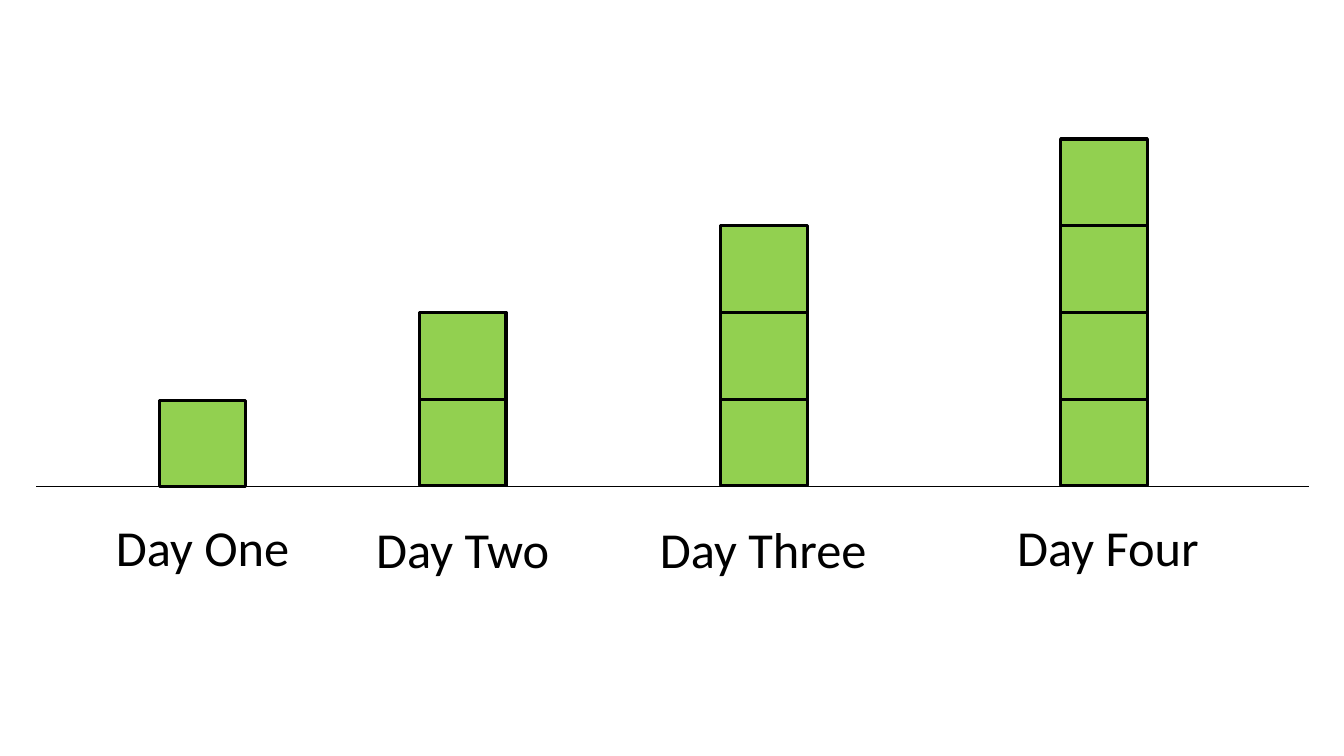
from lxml import etree
from pptx import Presentation
from pptx import util as u
from pptx.dml.color import RGBColor
from pptx.enum import shapes, text
from pptx.oxml import ns


def color(value):
    return RGBColor.from_string(value)


class DayChart:
    """Draws stacks of day squares on one page in a shared style."""

    font = "Calibri"
    ink = "000000"
    green = "92D050"
    side = 0.86
    label_width = 2.46

    def __init__(self, page):
        self.page = page

    def baseline(self, left, right, top):
        line = self.page.shapes.add_connector(
            shapes.MSO_CONNECTOR.STRAIGHT,
            u.Inches(left), u.Inches(top), u.Inches(right), u.Inches(top))
        line.line.color.rgb = color(self.ink)
        line.line.width = u.Pt(0.5)
        etree.SubElement(line.element.spPr, ns.qn("a:effectLst"))

    def square(self, parent, left, top):
        box = parent.shapes.add_shape(
            shapes.MSO_SHAPE.RECTANGLE, u.Inches(left), u.Inches(top),
            u.Inches(self.side), u.Inches(self.side))
        box.shadow.inherit = False
        box.fill.solid()
        box.fill.fore_color.rgb = color(self.green)
        box.line.color.rgb = color(self.ink)
        box.line.width = u.Pt(2.25)

    def stack(self, left, bottom_top, count):
        parent = self.page.shapes.add_group_shape() if count > 1 else self.page
        for level in range(count):
            self.square(parent, left, bottom_top - level * self.side)

    def label(self, wording, left, top):
        box = self.page.shapes.add_textbox(
            u.Inches(left), u.Inches(top),
            u.Inches(self.label_width), u.Inches(0.71))
        frame = box.text_frame
        frame.word_wrap = True
        frame.auto_size = text.MSO_AUTO_SIZE.SHAPE_TO_FIT_TEXT
        frame.text = wording
        para = frame.paragraphs[0]
        para.alignment = text.PP_ALIGN.CENTER
        span = para.runs[0]
        span.font.name = self.font
        span.font.size = u.Pt(36)
        span.font.color.rgb = color(self.ink)


def main():
    deck = Presentation()
    deck.slide_width = u.Inches(13.33)
    deck.slide_height = u.Inches(7.5)
    chart = DayChart(deck.slides.add_slide(deck.slide_layouts[6]))
    days = [
        ("Day One", 1.58, 3.97, 0.78, 5.07),
        ("Day Two", 4.16, 3.96, 3.36, 5.09),
        ("Day Three", 7.15, 3.96, 6.34, 5.09),
        ("Day Four", 10.52, 3.96, 9.76, 5.07),
    ]
    chart.baseline(0.36, 12.98, 4.83)
    for count, (_, left, bottom_top, _, _) in enumerate(days, start=1):
        chart.stack(left, bottom_top, count)
    for wording, _, _, label_left, label_top in days:
        chart.label(wording, label_left, label_top)
    deck.save("out.pptx")


if __name__ == "__main__":
    main()
